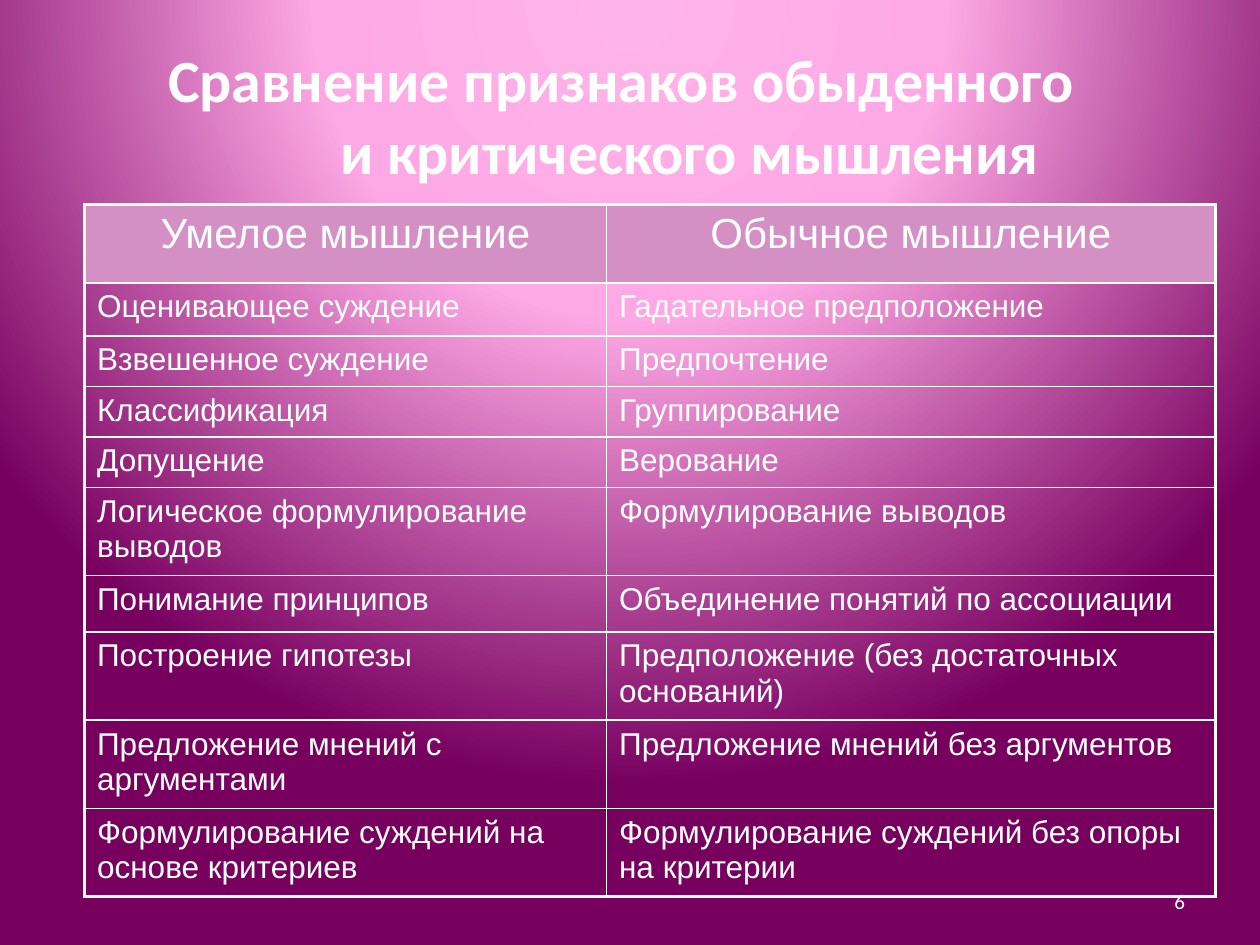
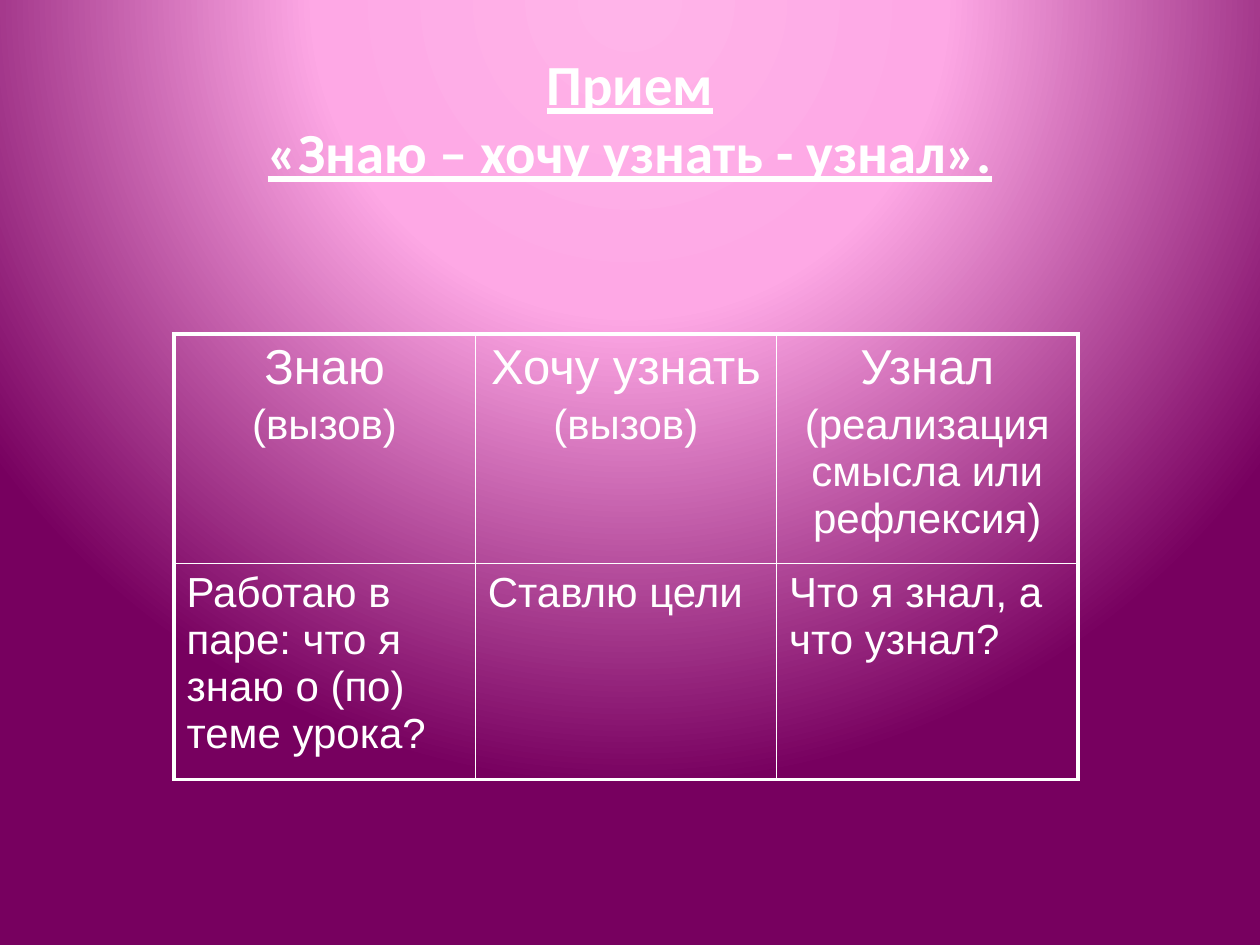
from lxml.etree import SubElement as Sub
from pptx import Presentation
from pptx.dml.color import RGBColor
from pptx.enum.text import MSO_ANCHOR as Anchor, PP_ALIGN as Align
from pptx.oxml.ns import qn
from pptx.util import Pt

WHITE = "FFFFFF"
HEADER = "D490C5"
GLOW = [(0, "FFB4E9"), (40, "FEA8E5"), (100, "77005F")]
TITLE_FONT, TABLE_FONT = "Calibri", "Arial"
THICK, THIN = 2.25, 1


def colour(value):
    """Turn a hex string into a colour."""
    return RGBColor.from_string(value)


class Slides:
    """Hold the shared style and the current page."""

    def __init__(self):
        """Start a 10 by 7.5 inch deck with the glowing background."""
        self.deck = Presentation()
        self.deck.slide_width, self.deck.slide_height = Pt(720), Pt(540)
        self.page = None
        self.background()

    def background(self):
        """Give the master a circular gradient centred above the page."""
        master = self.deck.slide_master
        master.background.fill.gradient()
        gradient = master.element.find(".//" + qn("p:bg")).find(".//" + qn("a:gradFill"))
        for child in list(gradient):
            gradient.remove(child)
        stops = Sub(gradient, qn("a:gsLst"))
        for position, value in GLOW:
            stop = Sub(stops, qn("a:gs"), pos=str(position * 1000))
            Sub(stop, qn("a:srgbClr"), val=value)
        circle = Sub(gradient, qn("a:path"), path="circle")
        Sub(circle, qn("a:fillToRect"), l="50000", t="-80000", r="50000", b="180000")

    def new_page(self):
        """Add a blank page and make it current."""
        self.page = self.deck.slides.add_slide(self.deck.slide_layouts[6])

    def span(self, para, text, size, font, bold=False, underline=False):
        """Add one white run to a paragraph."""
        span = para.add_run()
        span.text = text
        span.font.size, span.font.name = Pt(size), font
        span.font.bold, span.font.underline = bold, underline
        span.font.color.rgb = colour(WHITE)

    def text(self, place, lines, size, align, indents=None, **style):
        """Add a middle-anchored text box with one paragraph per line."""
        box = self.page.shapes.add_textbox(*map(Pt, place))
        frame = box.text_frame
        frame.word_wrap, frame.vertical_anchor = True, Anchor.MIDDLE
        for index, line in enumerate(lines):
            para = frame.add_paragraph() if index else frame.paragraphs[0]
            para.alignment = align
            if indents:
                para._p.get_or_add_pPr().set("marL", str(Pt(indents[index])))
            self.span(para, line, size, TITLE_FONT, **style)

    def title(self, place, lines, size, align=Align.CENTER, indents=None, underline=False):
        """Add a bold title."""
        self.text(place, lines, size, align, indents, bold=True, underline=underline)

    def number(self, value):
        """Add the page number at the lower right."""
        self.text((516.2, 500.4, 168, 28.8), [value], 12, Align.RIGHT)

    def borders(self, cell, widths):
        """Draw the white left, right, top and bottom lines of a cell."""
        properties = cell._tc.get_or_add_tcPr()
        for side, width in zip("LRTB", widths):
            line = Sub(properties, qn("a:ln" + side), w=str(Pt(width)))
            Sub(Sub(line, qn("a:solidFill")), qn("a:srgbClr"), val=WHITE)

    def cell(self, cell, lines, align, fill):
        """Fill a cell with (text, size) lines."""
        if fill:
            cell.fill.solid()
            cell.fill.fore_color.rgb = colour(fill)
        else:
            cell.fill.background()
        frame = cell.text_frame
        for index, (text, size) in enumerate(lines):
            para = frame.add_paragraph() if index else frame.paragraphs[0]
            para.alignment = align
            para.space_before = Pt(4 if index else 0)
            self.span(para, text, size, TABLE_FONT)

    def table(self, corner, widths, heights, rows, header_fill=None):
        """Add a table with a thick outline and a centred first row."""
        size = sum(widths), sum(heights)
        table = self.page.shapes.add_table(
            len(heights), len(widths), *map(Pt, (*corner, *size))).table
        table.first_row = table.horz_banding = False
        for column, width in zip(table.columns, widths):
            column.width = Pt(width)
        for row, height in zip(table.rows, heights):
            row.height = Pt(height)
        last_row, last_column = len(heights) - 1, len(widths) - 1
        for r, row in enumerate(rows):
            for c, lines in enumerate(row):
                cell = table.cell(r, c)
                outer = (c == 0, c == last_column, r == 0, r == last_row)
                self.borders(cell, [THICK if edge else THIN for edge in outer])
                self.cell(cell, lines, Align.LEFT if r else Align.CENTER,
                          None if r else header_fill)


COMPARISON = [
    ("Умелое мышление", "Обычное мышление"),
    ("Оценивающее суждение", "Гадательное предположение"),
    ("Взвешенное суждение", "Предпочтение"),
    ("Классификация", "Группирование"),
    ("Допущение", "Верование"),
    ("Логическое формулирование выводов", "Формулирование выводов"),
    ("Понимание принципов", "Объединение понятий по ассоциации"),
    ("Построение гипотезы", "Предположение (без достаточных оснований)"),
    ("Предложение мнений с аргументами", "Предложение мнений без аргументов"),
    ("Формулирование суждений на основе критериев",
     "Формулирование суждений без опоры на критерии"),
]
STAGES = [("Знаю", "(вызов)"), ("Хочу узнать", "(вызов)"),
          ("Узнал", "(реализация смысла или рефлексия)")]
TASKS = ["Работаю в паре: что я знаю о (по) теме урока?", "Ставлю цели",
         "Что я знал, а что узнал?"]


def comparison_page(slides):
    """Build the comparison of two kinds of thinking."""
    slides.new_page()
    slides.title((82, 20.2, 624.2, 90),
                 ["Сравнение признаков обыденного", "и критического мышления"],
                 34.2, Align.LEFT, indents=(7, 105.5))
    slides.number("6")
    rows = [[[(text, 18 if index else 24)] for text in pair]
            for index, pair in enumerate(COMPARISON)]
    heights = [44.9, 30.4, 27.4, 27.4, 27.3, 47.6, 32.2, 47.5, 47.5, 47.5]
    slides.table((48.3, 116.8), (298.3, 347.9), heights, rows, HEADER)


def stages_page(slides):
    """Build the table of know, want to know and learned."""
    slides.new_page()
    slides.title((36, 21.6, 648, 90), ["Прием", "«Знаю – хочу узнать - узнал»."],
                 32.4, underline=True)
    stages = [[(name, 28), (note, 24)] for name, note in STAGES]
    tasks = [[(task, 24)] for task in TASKS]
    slides.table((99.4, 190.8), [172.2] * 3, [123.3] * 2, [stages, tasks])


def main():
    """Build both pages and save the deck."""
    slides = Slides()
    comparison_page(slides)
    stages_page(slides)
    slides.deck.save("out.pptx")


if __name__ == "__main__":
    main()
